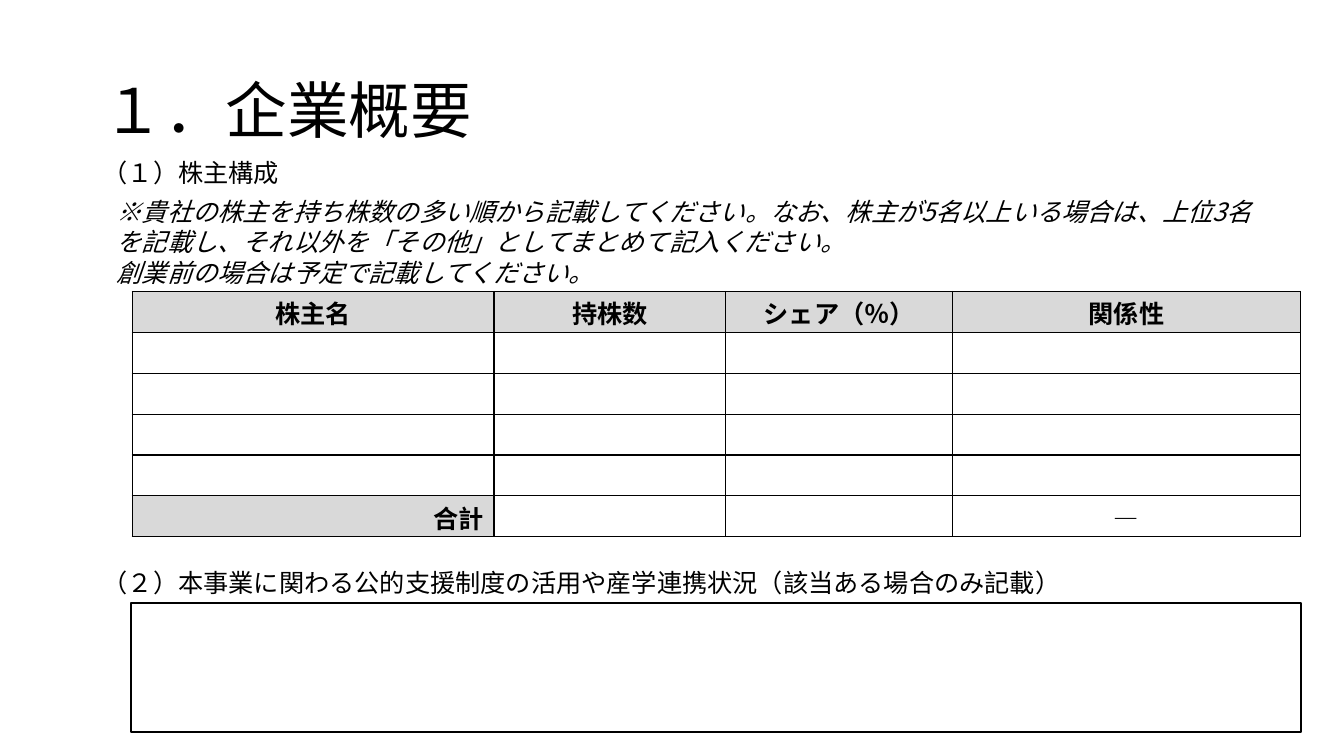
from lxml import etree
from pptx import Presentation
from pptx.dml.color import RGBColor
from pptx.enum.shapes import MSO_SHAPE
from pptx.enum.text import MSO_ANCHOR, PP_ALIGN
from pptx.oxml.ns import qn
from pptx.util import Pt

RECTANGLE = MSO_SHAPE.RECTANGLE
TOP, MIDDLE, BOTTOM = MSO_ANCHOR.TOP, MSO_ANCHOR.MIDDLE, MSO_ANCHOR.BOTTOM
LEFT, CENTER, RIGHT = PP_ALIGN.LEFT, PP_ALIGN.CENTER, PP_ALIGN.RIGHT

FONT = "Noto Sans CJK JP"
BLACK, WHITE, GRAY = "000000", "FFFFFF", "D9D9D9"
TEXT_LEFT, TEXT_WIDTH = 66.24, 828

NOTES = [
    "※貴社の株主を持ち株数の多い順から記載してください。なお、株主が5名以上いる場合は、"
    "上位3名を記載し、それ以外を「その他」としてまとめて記入ください。",
    "創業前の場合は予定で記載してください。",
]
HEADINGS = ["株主名", "持株数", "シェア（％）", "関係性"]
COLUMN_WIDTHS = [258.5, 165.6, 162, 248.4]
ROW_COUNT, ROW_HEIGHT = 6, 29.2


def color(value):
    return RGBColor.from_string(value)


def fill_solid(target, value):
    target.fill.solid()
    target.fill.fore_color.rgb = color(value)


def write(para, text, **formats):
    """Add a run in the slide font, for Latin and East Asian characters alike."""
    span = para.add_run()
    span.text = text
    settings = {"size": Pt(18), "name": FONT, **formats}
    for name, value in settings.items():
        setattr(span.font, name, value)
    span.font.color.rgb = color(BLACK)
    properties = span.font._element
    east_asian = etree.Element(qn("a:ea"), typeface=FONT)
    properties.find(qn("a:latin")).addnext(east_asian)


def add_text(page, lines, left, top, height, anchor=TOP, line_spacing=1.0, **formats):
    box = page.shapes.add_textbox(Pt(left), Pt(top), Pt(TEXT_WIDTH), Pt(height))
    frame = box.text_frame
    frame.word_wrap = True
    frame.vertical_anchor = anchor
    for index, line in enumerate(lines):
        para = frame.add_paragraph() if index else frame.paragraphs[0]
        para.line_spacing = line_spacing
        write(para, line, **formats)


def add_borders(cell):
    properties = cell._tc.get_or_add_tcPr()
    for index, side in enumerate(("lnL", "lnR", "lnT", "lnB")):
        border = etree.Element(qn(f"a:{side}"), w=str(Pt(1)))
        fill = etree.SubElement(border, qn("a:solidFill"))
        etree.SubElement(fill, qn("a:srgbClr"), val=BLACK)
        properties.insert(index, border)


def fill_cell(cell, text, align, background, bold):
    cell.vertical_anchor = BOTTOM
    cell.margin_top, cell.margin_bottom = Pt(0), Pt(1)
    fill_solid(cell, background)
    add_borders(cell)
    para = cell.text_frame.paragraphs[0]
    para.alignment = align
    if text:
        write(para, text, bold=bold)
    else:
        para.font.size = Pt(18)


def add_shareholder_table(page):
    frame = page.shapes.add_table(
        ROW_COUNT, len(COLUMN_WIDTHS), Pt(94.4), Pt(208.2),
        Pt(sum(COLUMN_WIDTHS)), Pt(ROW_COUNT * ROW_HEIGHT))
    table = frame.table
    for column, width in zip(table.columns, COLUMN_WIDTHS):
        column.width = Pt(width)
    for row in table.rows:
        row.height = Pt(ROW_HEIGHT)

    total = ROW_COUNT - 1
    labels = {(0, index): (text, CENTER, GRAY, True) for index, text in enumerate(HEADINGS)}
    labels[total, 0] = ("合計", RIGHT, GRAY, True)
    labels[total, 3] = ("―", CENTER, WHITE, False)
    for row in range(ROW_COUNT):
        for column in range(len(COLUMN_WIDTHS)):
            label = labels.get((row, column), ("", LEFT, WHITE, False))
            fill_cell(table.cell(row, column), *label)


def add_answer_box(page):
    box = page.shapes.add_shape(RECTANGLE, Pt(93.6), Pt(430.6), Pt(835.7), Pt(92.2))
    box.shadow.inherit = False
    fill_solid(box, WHITE)
    box.line.color.rgb = color(BLACK)
    box.line.width = Pt(1)


def main():
    deck = Presentation()
    deck.slide_width, deck.slide_height = Pt(960), Pt(540)
    page = deck.slides.add_slide(deck.slide_layouts[6])
    add_text(page, ["１．企業概要"], TEXT_LEFT, 28.8, 104.4, MIDDLE, 0.9, size=Pt(44))
    add_text(page, NOTES, 76.3, 136.8, 72.7, italic=True)
    add_text(page, ["（１）株主構成"], TEXT_LEFT, 108.7, 29)
    add_text(page, ["（２）本事業に関わる公的支援制度の活用や産学連携状況（該当ある場合のみ記載）"],
             TEXT_LEFT, 401.8, 29)
    add_shareholder_table(page)
    add_answer_box(page)
    deck.save("out.pptx")


if __name__ == "__main__":
    main()
